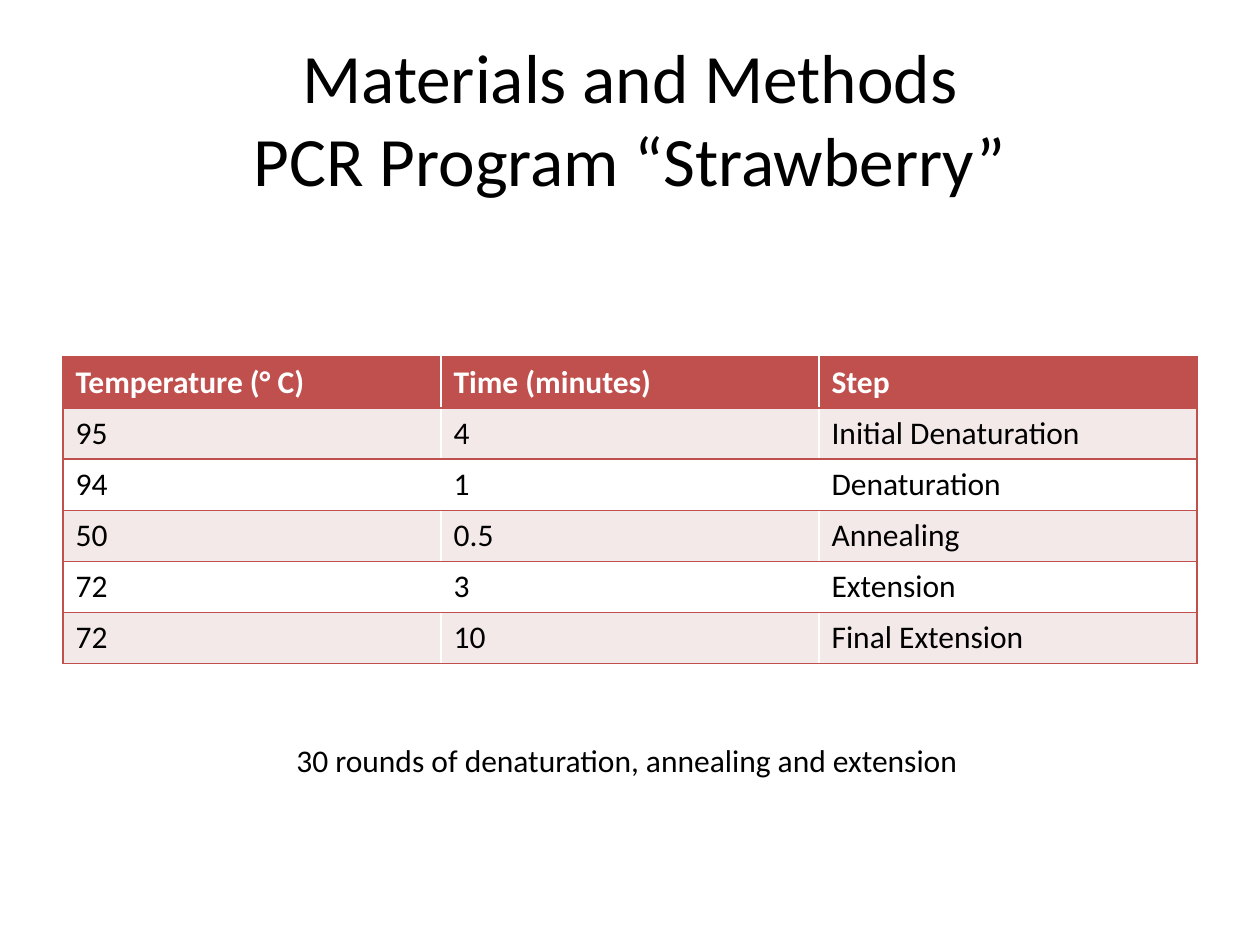
from lxml.etree import SubElement
from pptx import Presentation
from pptx.dml.color import RGBColor
from pptx.enum.text import MSO_ANCHOR, MSO_AUTO_SIZE, PP_ALIGN
from pptx.oxml.ns import qn
from pptx.util import Emu, Pt

PX_PER_INCH = 126
FONT = "Calibri"
BLACK = RGBColor(0x00, 0x00, 0x00)
WHITE = RGBColor(0xFF, 0xFF, 0xFF)
RED = RGBColor(0xC0, 0x50, 0x4D)
PINK = RGBColor(0xF4, 0xE9, 0xE9)

PROGRAM = [
    ("Temperature (° C)", "Time (minutes)", "Step"),
    ("95", "4", "Initial Denaturation"),
    ("94", "1", "Denaturation"),
    ("50", "0.5", "Annealing"),
    ("72", "3", "Extension"),
    ("72", "10", "Final Extension"),
]


def px(length):
    return Emu(round(length * 914400 / PX_PER_INCH))


def format_text(frame, size, color=BLACK, bold=False, align=PP_ALIGN.LEFT):
    for para in frame.paragraphs:
        para.alignment = align
        for span in para.runs:
            span.font.name = FONT
            span.font.size = Pt(size)
            span.font.bold = bold
            span.font.color.rgb = color


def add_title(slide, text):
    title = slide.shapes.title
    title.left, title.top, title.width, title.height = px(63), px(38), px(1134), px(158)
    frame = title.text_frame
    frame.text = text
    frame.auto_size = MSO_AUTO_SIZE.NONE
    frame.vertical_anchor = MSO_ANCHOR.MIDDLE
    format_text(frame, 39.6, align=PP_ALIGN.CENTER)


def set_borders(cell, sides):
    """Draw a thin red line on the given sides, in the order L, R, T, B."""
    properties = cell._tc.get_or_add_tcPr()
    for side in sides:
        line = SubElement(properties, qn(f"a:ln{side}"), w=str(Pt(1)))
        fill = SubElement(line, qn("a:solidFill"))
        SubElement(fill, qn("a:srgbClr"), val=str(RED))


def add_program_table(slide, rows):
    row_count, column_count = len(rows), len(rows[0])
    table = slide.shapes.add_table(
        row_count, column_count, px(63), px(357), px(1134), px(51 * row_count)
    ).table
    outer_sides = {0: "L", column_count - 1: "R"}
    for row_index, row in enumerate(rows):
        is_header = row_index == 0
        background = RED if is_header else PINK if row_index % 2 else WHITE
        for column_index, text in enumerate(row):
            cell = table.cell(row_index, column_index)
            cell.text = text
            format_text(cell.text_frame, 18, WHITE if is_header else BLACK, is_header)
            set_borders(cell, outer_sides.get(column_index, "") + "TB")
            cell.fill.solid()
            cell.fill.fore_color.rgb = background


def add_note(slide, text):
    box = slide.shapes.add_textbox(px(284), px(735), px(1029), px(51))
    frame = box.text_frame
    frame.word_wrap = True
    frame.auto_size = MSO_AUTO_SIZE.SHAPE_TO_FIT_TEXT
    frame.text = text
    format_text(frame, 18)


def main():
    deck = Presentation()
    deck.slide_width, deck.slide_height = px(1260), px(945)
    slide = deck.slides.add_slide(deck.slide_layouts[5])
    add_title(slide, "Materials and Methods\vPCR Program “Strawberry”")
    add_program_table(slide, PROGRAM)
    add_note(slide, "30 rounds of denaturation, annealing and extension")
    deck.save("out.pptx")


if __name__ == "__main__":
    main()
